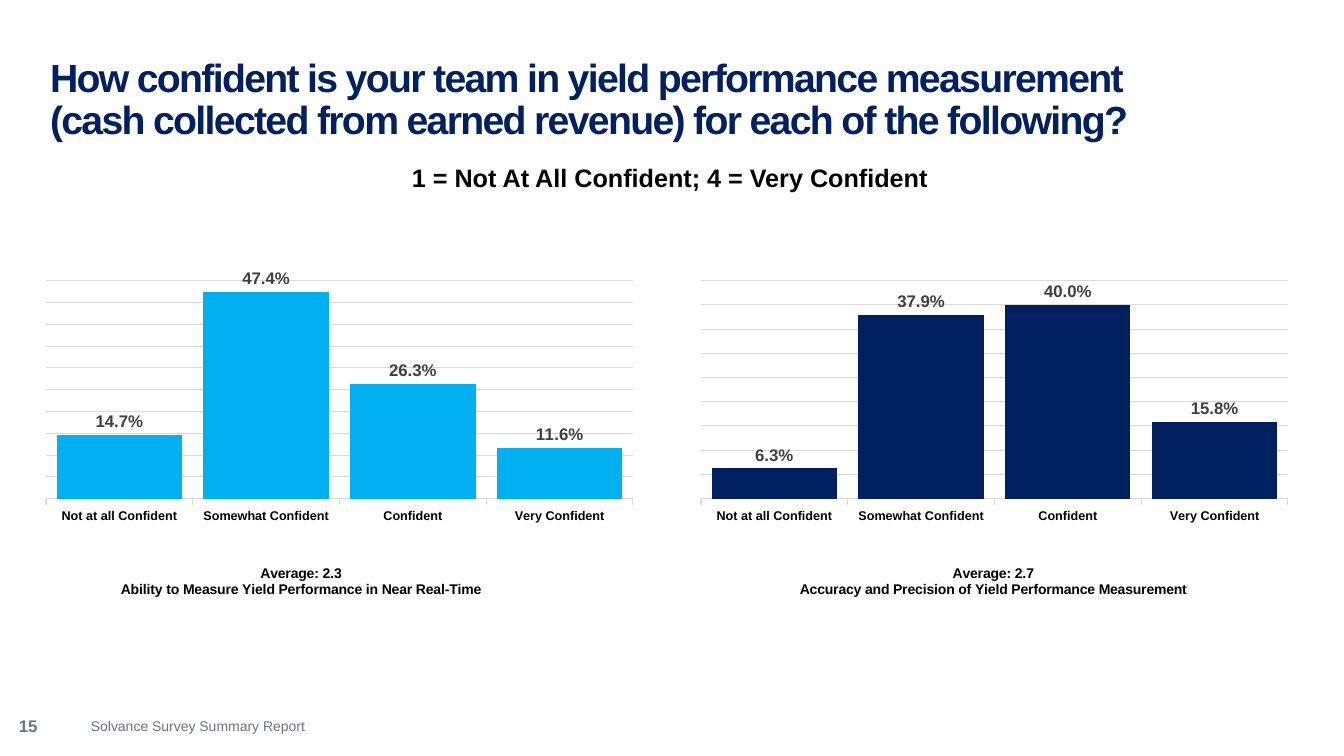
from dataclasses import dataclass
from lxml import etree
from pptx import Presentation
from pptx import util as u
from pptx.chart.data import CategoryChartData
from pptx.dml.color import RGBColor
from pptx.enum import chart as ch, text
from pptx.oxml import ns


@dataclass(frozen=True)
class Theme:
    font: str = "Arial"
    navy: str = "002060"
    sky: str = "00B0F0"
    black: str = "000000"
    label: str = "404040"
    footer: str = "69767D"
    grid: str = "D9D9D9"
    title_size: int = 28
    scale_size: int = 18
    label_size: int = 12
    report_size: int = 10
    axis_title_size: int = 10
    category_size: int = 9
    hairline: float = 0.75


THEME = Theme()
SLIDE_SIZE = (1344, 756)
QUESTION = (
    "How confident is your team in yield performance measurement ",
    "(cash collected from earned revenue) for each of the following?",
)
SCALE_NOTE = "1 = Not At All Confident; 4 = Very Confident"
PAGE_NUMBER = "15"
REPORT_NAME = "Solvance Survey Summary Report"
ANSWERS = ["Not at all Confident", "Somewhat Confident", "Confident", "Very Confident"]
SURVEYS = [
    dict(average="Average: 2.3", topic="Ability to Measure Yield Performance in Near Real-Time",
         shares=(0.147, 0.474, 0.263, 0.116), color=THEME.sky, top_share=0.5,
         plot=dict(x=0.01, y=0.06, w=0.98, h=0.49), caption=dict(x=0.13, y=0.69)),
    dict(average="Average: 2.7", topic="Accuracy and Precision of Yield Performance Measurement",
         shares=(0.063, 0.379, 0.4, 0.158), color=THEME.navy, top_share=0.45,
         plot=dict(x=0.01, y=0.06, w=0.98, h=0.49), caption=dict(x=0.17, y=0.69)),
]
CHART_LEFT, CHART_TOP, CHART_WIDTH, CHART_HEIGHT = 40, 254, 599, 445
CHART_STEP = 655


def px(*lengths):
    return [u.Emu(round(length * 914400 / 100.8)) for length in lengths]


def style(font, size, color, bold=True):
    font.name = THEME.font
    font.size = u.Pt(size)
    font.bold = bold
    font.color.rgb = RGBColor.from_string(color)


def set_line(line, color):
    line.color.rgb = RGBColor.from_string(color)
    line.width = u.Pt(THEME.hairline)


def clear_insets(frame):
    frame.margin_left = frame.margin_right = frame.margin_top = frame.margin_bottom = 0


def add_text(slide, words, place, size, color, bold=True):
    frame = slide.shapes.add_textbox(*px(*place)).text_frame
    frame.word_wrap = True
    frame.text = words
    style(frame.paragraphs[0].font, size, color, bold)
    return frame


def set_layout(parent, position, area, inner=False):
    for old in parent.findall(ns.qn("c:layout")):
        parent.remove(old)
    layout = etree.Element(ns.qn("c:layout"))
    manual = etree.SubElement(layout, ns.qn("c:manualLayout"))
    settings = [("layoutTarget", "inner")] if inner else []
    settings += [("xMode", "edge"), ("yMode", "edge"), *area.items()]
    for tag, value in settings:
        etree.SubElement(manual, ns.qn(f"c:{tag}")).set("val", str(value))
    parent.insert(position, layout)


def add_survey(slide, survey, left):
    data = CategoryChartData(number_format="0.0%")
    data.categories = ANSWERS
    data.add_series("Series 1", survey["shares"])
    chart = slide.shapes.add_chart(
        ch.XL_CHART_TYPE.COLUMN_CLUSTERED,
        *px(left, CHART_TOP, CHART_WIDTH, CHART_HEIGHT), data).chart
    chart.has_legend = False
    chart.has_title = False
    style(chart.font, THEME.axis_title_size, THEME.black, False)

    answers = chart.category_axis
    answers.major_tick_mark = ch.XL_TICK_MARK.OUTSIDE
    style(answers.tick_labels.font, THEME.category_size, THEME.black)
    set_line(answers.format.line, THEME.grid)
    caption = answers.axis_title
    caption.text_frame.text = survey["average"]
    caption.text_frame.add_paragraph().text = survey["topic"]
    for paragraph in caption.text_frame.paragraphs:
        style(paragraph.font, THEME.axis_title_size, THEME.black)
    set_layout(caption._element, 1, survey["caption"])

    shares = chart.value_axis
    shares.minimum_scale = 0
    shares.maximum_scale = survey["top_share"]
    shares.major_unit = 0.05
    shares.has_major_gridlines = True
    set_line(shares.major_gridlines.format.line, THEME.grid)
    shares.visible = False

    plot = chart.plots[0]
    plot.vary_by_categories = False
    plot.gap_width = 17
    plot.overlap = -27
    fill = plot.series[0].format.fill
    fill.solid()
    fill.fore_color.rgb = RGBColor.from_string(survey["color"])
    plot.has_data_labels = True
    labels = plot.data_labels
    labels.show_value = True
    labels.position = ch.XL_LABEL_POSITION.OUTSIDE_END
    labels.number_format = "0.0%"
    labels.number_format_is_linked = False
    style(labels.font, THEME.label_size, THEME.label)
    set_layout(chart._chartSpace.chart.plotArea, 0, survey["plot"], inner=True)


def main():
    deck = Presentation()
    deck.slide_width, deck.slide_height = px(*SLIDE_SIZE)
    slide = deck.slides.add_slide(deck.slide_layouts[5])

    question = slide.shapes.title
    question.left, question.top, question.width, question.height = px(50, 50, 1240, 101)
    frame = question.text_frame
    frame.text = "\v".join(QUESTION)
    frame.word_wrap = True
    frame.auto_size = text.MSO_AUTO_SIZE.NONE
    frame.vertical_anchor = text.MSO_ANCHOR.MIDDLE
    clear_insets(frame)
    heading = frame.paragraphs[0]
    heading.alignment = text.PP_ALIGN.LEFT
    heading.line_spacing = 0.9
    style(heading.font, THEME.title_size, THEME.navy)
    for run in heading.runs:
        run._r.get_or_add_rPr().set("spc", "-120")

    scale_note = add_text(slide, SCALE_NOTE, (50, 166, 1240, 36), THEME.scale_size, THEME.black)
    clear_insets(scale_note)
    scale_note.paragraphs[0].alignment = text.PP_ALIGN.CENTER
    scale_note.paragraphs[0].line_spacing = 0.9

    for index, survey in enumerate(SURVEYS):
        add_survey(slide, survey, CHART_LEFT + index * CHART_STEP)

    add_text(slide, PAGE_NUMBER, (9, 711, 45, 30), THEME.label_size, THEME.footer)
    add_text(slide, REPORT_NAME, (81, 713, 983, 27), THEME.report_size, THEME.footer, False)
    deck.save("out.pptx")


if __name__ == "__main__":
    main()
